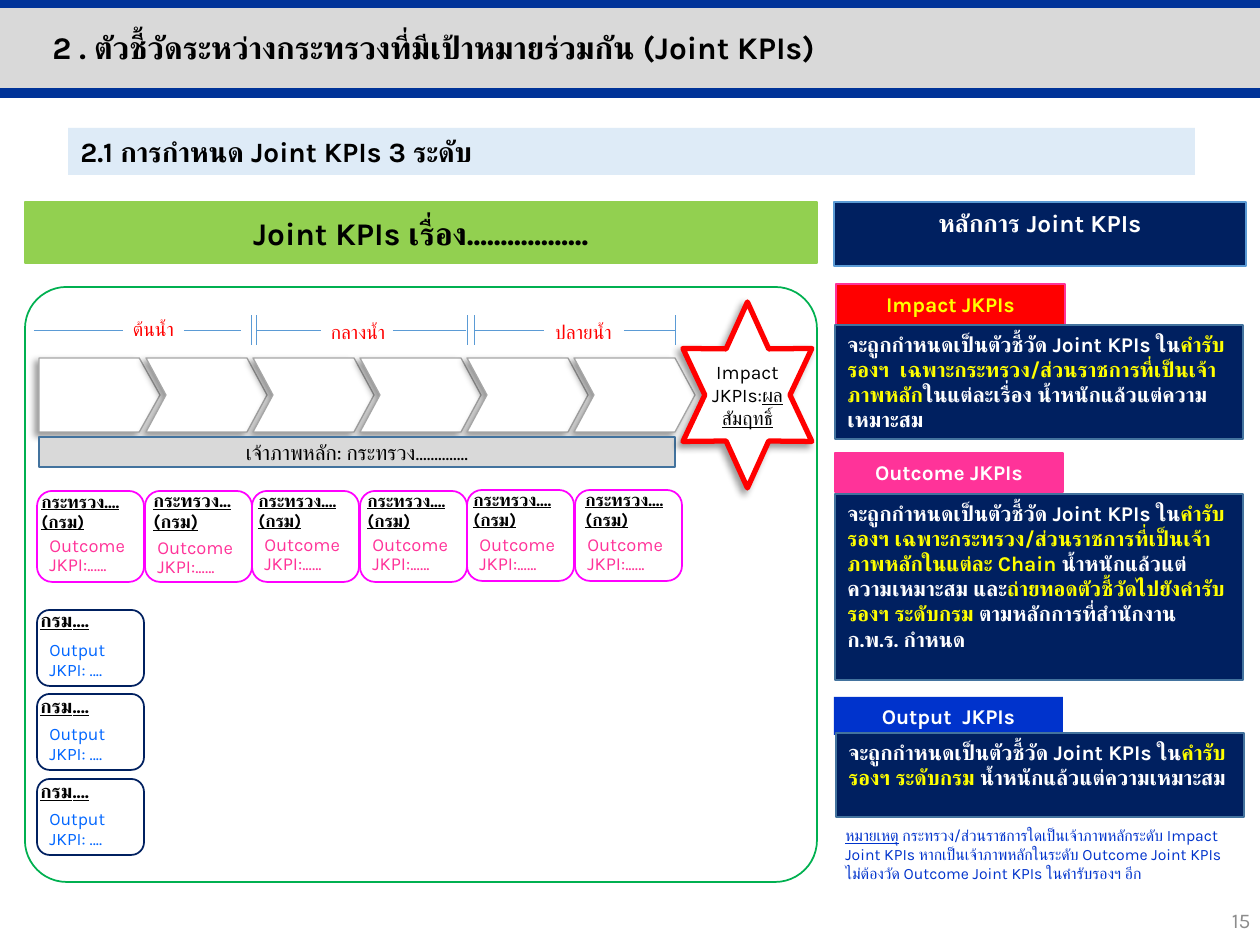
from lxml import etree
from pptx import Presentation
from pptx.dml.color import RGBColor
from pptx.enum.shapes import MSO_CONNECTOR, MSO_SHAPE
from pptx.enum.text import MSO_ANCHOR, PP_ALIGN
from pptx.oxml.ns import qn
from pptx.util import Emu, Pt

EMU_PER_PX = 914400 / 126
FONT = "Karla"

RECT, ROUND = MSO_SHAPE.RECTANGLE, MSO_SHAPE.ROUNDED_RECTANGLE
CHEVRON, PENTAGON, STAR = MSO_SHAPE.CHEVRON, MSO_SHAPE.PENTAGON, MSO_SHAPE.STAR_6_POINT
STRAIGHT = MSO_CONNECTOR.STRAIGHT
TOP, MIDDLE = MSO_ANCHOR.TOP, MSO_ANCHOR.MIDDLE
LEFT, CENTER, RIGHT = PP_ALIGN.LEFT, PP_ALIGN.CENTER, PP_ALIGN.RIGHT

WHITE = RGBColor(0xFF, 0xFF, 0xFF)
BLACK = RGBColor(0x00, 0x00, 0x00)
GRAY = RGBColor(0xD9, 0xD9, 0xD9)
EDGE_GRAY = RGBColor(0xA6, 0xA6, 0xA6)
NUMBER_GRAY = RGBColor(0x8C, 0x8C, 0x8C)
RULE_BLUE = RGBColor(0x00, 0x33, 0x99)
SKY = RGBColor(0x5B, 0x9B, 0xD5)
PALE_BLUE = RGBColor(0xDE, 0xEB, 0xF7)
STEEL = RGBColor(0x43, 0x73, 0x9E)
NAVY = RGBColor(0x00, 0x20, 0x60)
ROYAL = RGBColor(0x00, 0x33, 0xCC)
BRIGHT_BLUE = RGBColor(0x00, 0x66, 0xFF)
GREEN = RGBColor(0x00, 0xB0, 0x50)
LIME = RGBColor(0x92, 0xD0, 0x50)
RED = RGBColor(0xFF, 0x00, 0x00)
YELLOW = RGBColor(0xFF, 0xFF, 0x00)
PINK = RGBColor(0xFF, 0x33, 0x99)
MAGENTA = RGBColor(0xFF, 0x00, 0xFF)


def px(length):
    return Emu(round(length * EMU_PER_PX))


class SlideBuilder:
    def __init__(self, page):
        self.shapes = page.shapes

    def label(self, box, runs, size, color=BLACK, bold=False, underline=False,
              align=LEFT, anchor=TOP, spacing=None):
        """Runs are (text, changes) pairs; changes may hold color and underline."""
        frame = box.text_frame
        frame.word_wrap = True
        frame.vertical_anchor = anchor
        para = frame.paragraphs[0]
        para.alignment = align
        if spacing:
            para.line_spacing = spacing
        if isinstance(runs, str):
            runs = [(runs, {})]
        for text, changes in runs:
            for index, line in enumerate(text.split("\n")):
                if index:
                    para.add_line_break()
                span = para.add_run()
                span.text = line
                font = span.font
                font.name, font.size, font.bold = FONT, Pt(size), bold
                font.underline = changes.get("underline", underline)
                font.color.rgb = changes.get("color", color)
                complex_font = etree.SubElement(font._element, qn("a:cs"))
                complex_font.set("typeface", FONT)

    def text(self, place, runs, size, **style):
        box = self.shapes.add_textbox(*map(px, place))
        self.label(box, runs, size, **style)

    def shape(self, kind, place, fill=None, line=None, width=1, adjust=None, shadow=False):
        box = self.shapes.add_shape(kind, *map(px, place))
        box.shadow.inherit = False
        if fill is None:
            box.fill.background()
        else:
            box.fill.solid()
            box.fill.fore_color.rgb = fill
        if line is None:
            box.line.fill.background()
        else:
            box.line.color.rgb = line
            box.line.width = Pt(width)
        if adjust is not None:
            box.adjustments[0] = adjust
        if shadow:
            self.drop_shadow(box)
        return box

    def drop_shadow(self, box):
        effects = box._element.spPr.find(qn("a:effectLst"))
        outer = etree.SubElement(effects, qn("a:outerShdw"), blurRad=str(Pt(4)),
                                 dist=str(Pt(3)), dir="8100000", algn="tr", rotWithShape="0")
        tint = etree.SubElement(outer, qn("a:srgbClr"), val="000000")
        etree.SubElement(tint, qn("a:alpha"), val="40000")

    def line(self, x1, y1, x2, y2, color=SKY, width=0.5):
        rule = self.shapes.add_connector(STRAIGHT, px(x1), px(y1), px(x2), px(y2))
        rule.line.color.rgb = color
        rule.line.width = Pt(width)
        etree.SubElement(rule._element.spPr, qn("a:effectLst"))


def add_header(build):
    build.shape(RECT, (0, 6, 1260, 86), GRAY)
    for y in (93, 3):
        build.line(0, y, 1260, y, RULE_BLUE, 6)
    build.text((40, 22, 1220, 50), "2 . ตัวชี้วัดระหว่างกระทรวงที่มีเป้าหมายร่วมกัน (Joint KPIs)",
               18, bold=True, anchor=MIDDLE)
    box = build.shape(RECT, (68, 128, 1127, 47), PALE_BLUE)
    build.label(box, "2.1 การกำหนด Joint KPIs 3 ระดับ", 16, bold=True)


def add_chain(build):
    box = build.shape(RECT, (25, 202, 792, 61), LIME, LIME)
    build.label(box, "Joint KPIs เรื่อง..................", 18, bold=True,
                align=CENTER, anchor=MIDDLE)
    build.shape(ROUND, (25, 287, 792, 595), line=GREEN, adjust=0.07)

    # Six steps
    for step in range(6):
        kind, adjust = (CHEVRON, 0.27) if step else (PENTAGON, 0.28)
        build.shape(kind, (39 + 107 * step, 358, 121, 74), WHITE, EDGE_GRAY, 0.75,
                    adjust, shadow=True)

    # Stage brackets and names
    for x1, x2 in ((34, 123), (184, 241), (257, 321), (393, 466), (474, 544), (624, 675)):
        build.line(x1, 330, x2, 330)
    for x in (251, 256, 467, 474, 675):
        build.line(x, 315, x, 345)
    for place, name in (((102, 311, 103, 26), "ต้นน้ำ"), ((305, 314, 106, 26), "กลางน้ำ"),
                        ((527, 314, 113, 37), "ปลายน้ำ")):
        build.text(place, name, 11, color=RED, align=CENTER)

    # Lead host and impact star
    box = build.shape(RECT, (39, 437, 636, 30), GRAY, STEEL)
    build.label(box, "เจ้าภาพหลัก: กระทรวง..............", 12, align=CENTER, anchor=MIDDLE)
    build.shape(STAR, (683, 302, 129, 186), WHITE, RED, 3, 0.286, shadow=True)
    build.text((683, 354, 129, 83), [("Impact JKPIs:", {}), ("ผลสัมฤทธิ์", {"underline": True})],
               11, align=CENTER)


def add_ministries(build):
    # Name left, name top, name size, dots, outcome top
    columns = ((29, 486, 10, "....", 530), (141, 485, 10.5, "...", 532),
               (246, 485, 10, "....", 529), (355, 485, 10, "....", 529),
               (461, 484, 10, "....", 529), (573, 484, 10, "....", 529))
    for index, (name_x, name_y, size, dots, outcome_y) in enumerate(columns):
        x = round(37 + 107.6 * index)
        build.shape(ROUND, (x, 491 if index < 4 else 490, 107, 91), line=MAGENTA)
        build.text((x, outcome_y, 117, 53), "Outcome JKPI:......", 10.5, color=PINK, spacing=0.9)
        build.text((name_x, name_y, 120, 54), f"กระทรวง{dots}\n(กรม)", size,
                   bold=True, underline=True, spacing=0.95)


def add_departments(build):
    for y, name_y in ((610, 604), (694, 690), (779, 775)):
        build.shape(ROUND, (37, y, 107, 76), line=NAVY)
        build.text((37, y + 24, 107, 53), "Output JKPI: ....", 10, color=BRIGHT_BLUE, spacing=0.95)
        build.text((28, name_y, 95, 35), "กรม....", 11, bold=True, underline=True, spacing=0.95)


def add_principles(build):
    box = build.shape(RECT, (834, 202, 412, 64), NAVY, SKY)
    build.label(box, "หลักการ Joint KPIs", 14, color=WHITE, bold=True, align=CENTER)

    marked = {"color": YELLOW}
    opening = ("จะถูกกำหนดเป็นตัวชี้วัด Joint KPIs ใน", {})
    levels = (
        ("Impact JKPIs", (836, 284, 229, 41), RED, PINK, YELLOW, (835, 325, 408, 114), [
            ("คำรับรองฯ  เฉพาะกระทรวง/ส่วนราชการที่เป็นเจ้าภาพหลัก", marked),
            ("ในแต่ละเรื่อง น้ำหนักแล้วแต่ความเหมาะสม", {})]),
        ("Outcome JKPIs", (835, 453, 228, 39), PINK, PINK, WHITE, (835, 494, 408, 186), [
            ("คำรับรองฯ เฉพาะกระทรวง/ส่วนราชการที่เป็นเจ้าภาพหลักในแต่ละ Chain ", marked),
            ("น้ำหนักแล้วแต่ความเหมาะสม และ", {}),
            ("ถ่ายทอดตัวชี้วัดไปยังคำรับรองฯ ระดับกรม ", marked),
            ("ตามหลักการที่สำนักงาน ก.พ.ร. กำหนด", {})]),
        ("Output  JKPIs", (834, 697, 229, 38), ROYAL, None, WHITE, (836, 733, 408, 84), [
            ("คำรับรองฯ ระดับกรม ", marked),
            ("น้ำหนักแล้วแต่ความเหมาะสม", {})]),
    )
    for title, tab_place, fill, edge, color, body_place, runs in levels:
        tab = build.shape(RECT, tab_place, fill, edge)
        build.label(tab, title, 12, color=color, bold=True, align=CENTER, anchor=MIDDLE)
        body = build.shape(RECT, body_place, NAVY, STEEL)
        build.label(body, [opening] + runs, 12, color=WHITE, bold=True)

    # Remark and page number
    build.text((833, 820, 408, 94), [
        ("หมายเหตุ", {"underline": True}),
        (" กระทรวง/ส่วนราชการใดเป็นเจ้าภาพหลักระดับ Impact Joint KPIs "
         "หากเป็นเจ้าภาพหลักในระดับ Outcome Joint KPIs "
         "ไม่ต้องวัด Outcome Joint KPIs ในคำรับรองฯ อีก", {})], 9, color=ROYAL)
    build.text((979, 895, 284, 50), "15", 12, color=NUMBER_GRAY, align=RIGHT, anchor=MIDDLE)


def main():
    deck = Presentation()
    deck.slide_width, deck.slide_height = px(1260), px(945)
    build = SlideBuilder(deck.slides.add_slide(deck.slide_layouts[6]))
    add_header(build)
    add_chain(build)
    add_ministries(build)
    add_departments(build)
    add_principles(build)
    deck.save("out.pptx")


if __name__ == "__main__":
    main()
